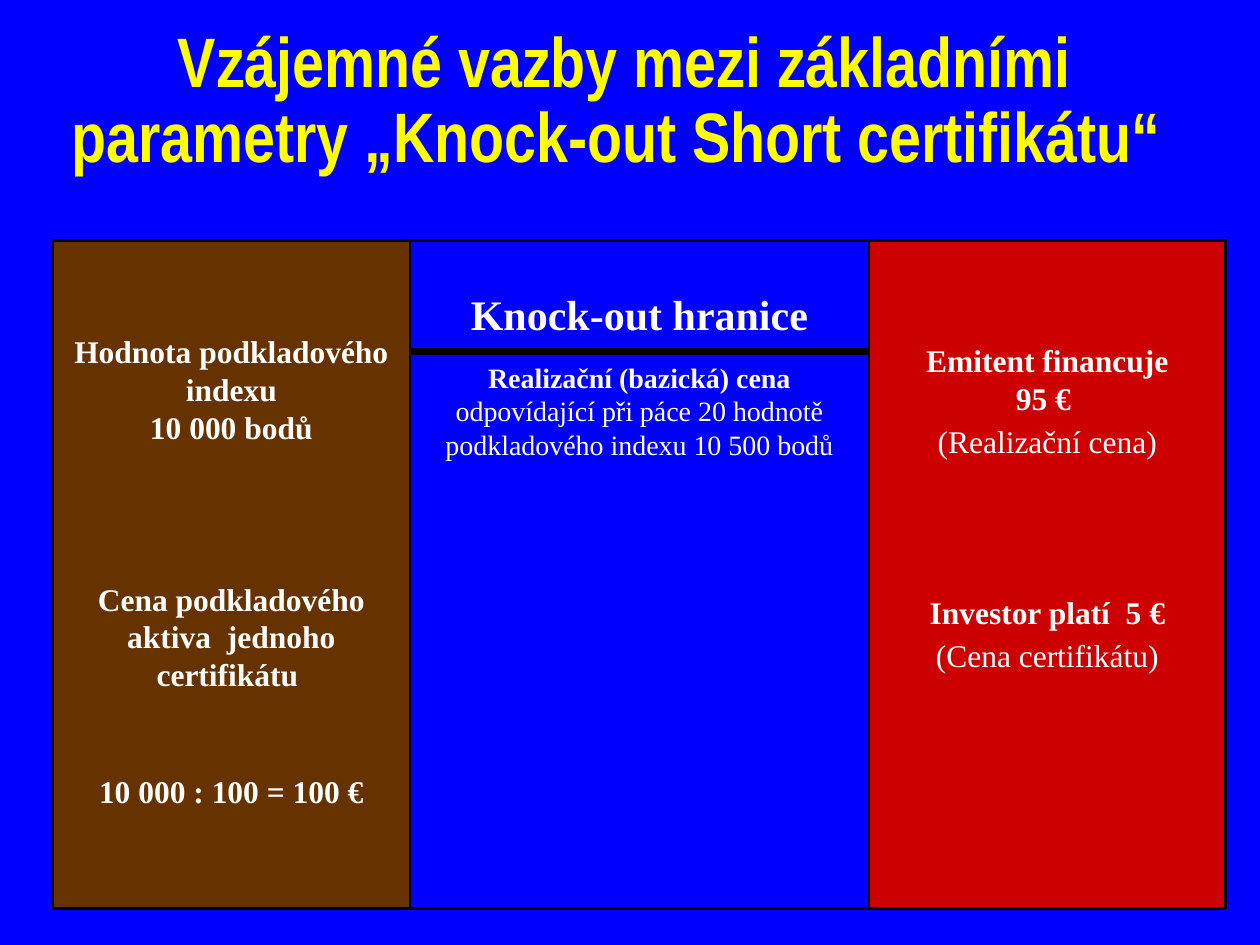
from dataclasses import dataclass

from lxml import etree
from pptx import Presentation
from pptx.dml.color import RGBColor
from pptx.enum.shapes import MSO_CONNECTOR, MSO_SHAPE
from pptx.enum.text import MSO_ANCHOR, PP_ALIGN
from pptx.oxml.ns import qn
from pptx.util import Cm, Pt

RECT = MSO_SHAPE.RECTANGLE
STRAIGHT = MSO_CONNECTOR.STRAIGHT
TOP, MIDDLE = MSO_ANCHOR.TOP, MSO_ANCHOR.MIDDLE
CENTER = PP_ALIGN.CENTER
SERIF, NARROW = "Times New Roman", "Arial Narrow"
BLACK, WHITE, BLUE, YELLOW = "000000", "FFFFFF", "0000FF", "FFFF00"
BROWN, RED = "663300", "CC0000"
LEFT, PANEL_TOP, HEIGHT = 1.07, 4.85, 13.46
SIDE_W, MIDDLE_W = 7.19, 9.26
MIDDLE_X = LEFT + SIDE_W
RIGHT_X = MIDDLE_X + MIDDLE_W


@dataclass
class Line:
    text: str
    before: float = 0
    bold: bool = True
    size: float = 18
    tail: str = ""


@dataclass
class Column:
    left: float
    width: float
    inset: float
    lines: list[Line]
    fill: str | None = None


COLUMNS = [
    Column(LEFT, SIDE_W, 1.85, [
        Line("Hodnota podkladového indexu"),
        Line("10 000 bodů"),
        Line("Cena podkladového aktiva  jednoho certifikátu ", 76.5),
        Line("10 000 : 100 = 100 €", 45),
    ], BROWN),
    Column(RIGHT_X, SIDE_W, 2.03, [
        Line("Emitent financuje"),
        Line("95 € "),
        Line("(Realizační cena)", 3, bold=False),
        Line("Investor platí  5 €", 76),
        Line("(Cena certifikátu)", 3, bold=False),
    ], RED),
    Column(MIDDLE_X, MIDDLE_W, 1.02, [
        Line("Knock-out hranice", size=24),
        Line("Realizační (bazická) cena ", 12, size=16,
             tail="odpovídající při páce 20 hodnotě podkladového indexu 10 500 bodů"),
    ]),
]


def rgb(value: str) -> RGBColor:
    return RGBColor.from_string(value)


def add_run(p, text: str, *, size: float, bold: bool = True,
            font: str = SERIF, color: str = WHITE) -> None:
    r = p.add_run()
    r.text = text
    r.font.name, r.font.size, r.font.bold = font, Pt(size), bold
    r.font.color.rgb = rgb(color)


def add_box(s, left: float, width: float, fill: str | None, line: float):
    sp = s.shapes.add_shape(RECT, Cm(left), Cm(PANEL_TOP), Cm(width), Cm(HEIGHT))
    sp.shadow.inherit = False
    if fill:
        sp.fill.solid()
        sp.fill.fore_color.rgb = rgb(fill)
    else:
        sp.fill.background()
    sp.line.color.rgb = rgb(BLACK)
    sp.line.width = Pt(line)
    return sp


def add_column(s, column: Column) -> None:
    if column.fill:
        sp = add_box(s, column.left, column.width, column.fill, 1)
    else:
        sp = s.shapes.add_textbox(Cm(column.left), Cm(PANEL_TOP - 0.05),
                                  Cm(column.width), Cm(HEIGHT))
    tf = sp.text_frame
    tf.word_wrap = True
    tf.vertical_anchor = TOP
    tf.margin_top = Cm(column.inset)
    for i, line in enumerate(column.lines):
        p = tf.add_paragraph() if i else tf.paragraphs[0]
        p.alignment = CENTER
        p.space_before = Pt(line.before)
        add_run(p, line.text, size=line.size, bold=line.bold)
        if line.tail:
            add_run(p, line.tail, size=line.size, bold=False)


def add_title(s, text: str) -> None:
    sp = s.shapes.add_textbox(Cm(0.89), Cm(0.36), Cm(23.39), Cm(3.4))
    tf = sp.text_frame
    tf.word_wrap = True
    tf.vertical_anchor = MIDDLE
    p = tf.paragraphs[0]
    p.alignment, p.line_spacing = CENTER, 0.9
    add_run(p, text, size=40, font=NARROW, color=YELLOW)


def add_barrier(s, y: float) -> None:
    sp = s.shapes.add_connector(STRAIGHT, Cm(MIDDLE_X), Cm(y), Cm(RIGHT_X), Cm(y))
    sp.line.color.rgb = rgb(BLACK)
    sp.line.width = Pt(4)
    etree.SubElement(sp._element.spPr, qn("a:effectLst"))


def main() -> None:
    """Build the slide on the parameters of a short knock-out certificate."""
    prs = Presentation()
    prs.slide_width, prs.slide_height = Cm(25.4), Cm(19.05)
    s = prs.slides.add_slide(prs.slide_layouts[6])
    s.background.fill.solid()
    s.background.fill.fore_color.rgb = rgb(BLUE)
    add_title(s, "Vzájemné vazby mezi základními parametry „Knock-out Short certifikátu“ ")
    for column in COLUMNS:
        add_column(s, column)
    add_box(s, LEFT, 2 * SIDE_W + MIDDLE_W, None, 1.5)
    add_barrier(s, 7.09)
    prs.save("out.pptx")


if __name__ == "__main__":
    main()
